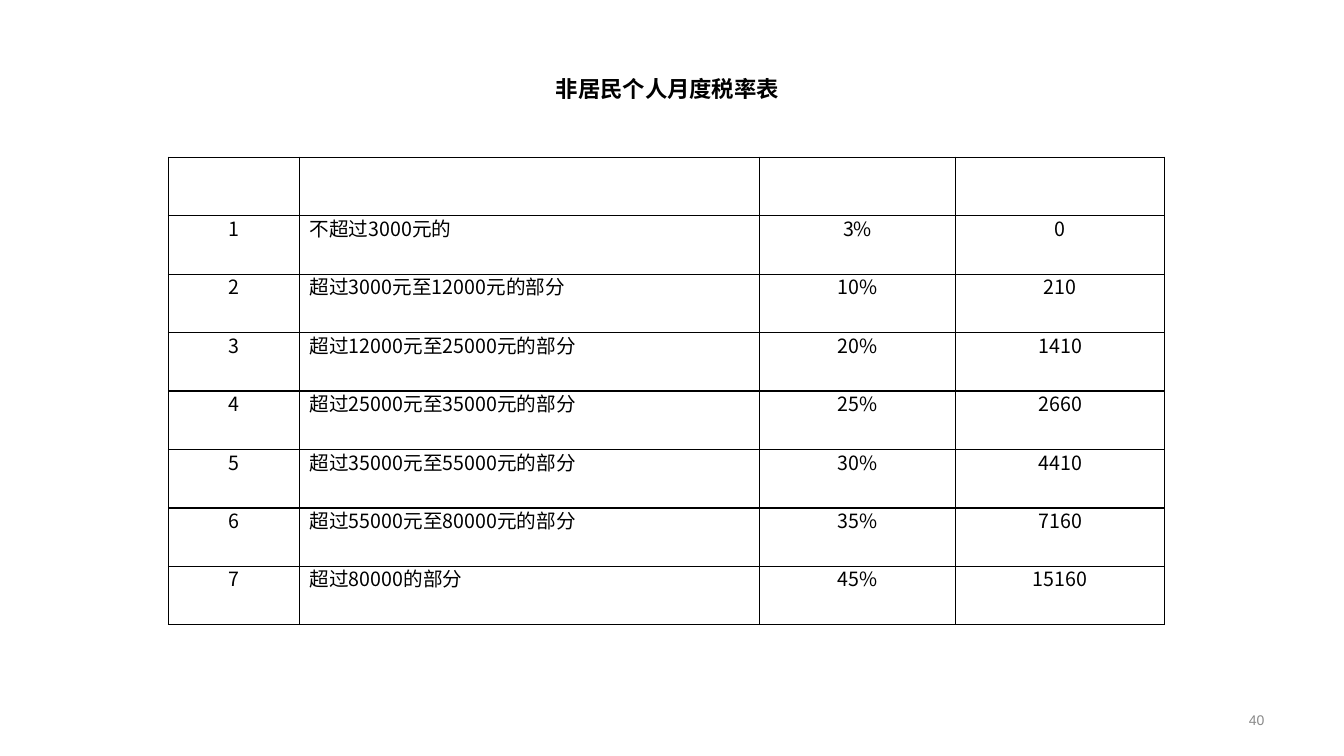
"""Build the slide with the monthly tax rate table for non-resident individuals."""
from dataclasses import astuple, dataclass

from lxml.etree import SubElement
from pptx import Presentation
from pptx.dml.color import RGBColor
from pptx.enum.shapes import MSO_SHAPE
from pptx.enum.text import MSO_ANCHOR as Anchor, MSO_AUTO_SIZE as AutoSize, PP_ALIGN as Align
from pptx.oxml.ns import qn
from pptx.slide import Slide
from pptx.table import _Cell as Cell
from pptx.text.text import TextFrame
from pptx.util import Inches, Pt

BLACK = RGBColor(0x00, 0x00, 0x00)
WHITE = RGBColor(0xFF, 0xFF, 0xFF)
GRAY = RGBColor(0x89, 0x89, 0x89)
CJK_FONT = "Noto Sans CJK SC"
COLUMN_WIDTHS = (1.3, 4.56, 1.95, 2.07)
ROW_HEIGHT = 0.58


@dataclass(frozen=True)
class TaxRow:
    level: str
    income: str
    rate: str
    deduction: str


@dataclass(frozen=True)
class TextStyle:
    size: int
    color: RGBColor
    bold: bool = False
    font: str = CJK_FONT
    align: Align = Align.CENTER


BRACKETS = (
    TaxRow("1", "不超过3000元的", "3%", "0"),
    TaxRow("2", "超过3000元至12000元的部分", "10%", "210"),
    TaxRow("3", "超过12000元至25000元的部分", "20%", "1410"),
    TaxRow("4", "超过25000元至35000元的部分", "25%", "2660"),
    TaxRow("5", "超过35000元至55000元的部分", "30%", "4410"),
    TaxRow("6", "超过55000元至80000元的部分", "35%", "7160"),
    TaxRow("7", "超过80000的部分", "45%", "15160"),
)
VALUE_STYLE = TextStyle(14, BLACK)
INCOME_STYLE = TextStyle(14, BLACK, align=Align.LEFT)
COLUMN_STYLES = (VALUE_STYLE, INCOME_STYLE, VALUE_STYLE, VALUE_STYLE)
TITLE_STYLE = TextStyle(16, BLACK, bold=True)
NUMBER_STYLE = TextStyle(10, GRAY, font="Arial", align=Align.RIGHT)


def write_text(frame: TextFrame, text: str, style: TextStyle) -> None:
    """Write one styled run into the first paragraph of a frame."""
    paragraph = frame.paragraphs[0]
    paragraph.alignment = style.align
    paragraph.line_spacing = 0.9
    run = paragraph.add_run()
    run.text = text
    run.font.size = Pt(style.size)
    run.font.bold = style.bold
    run.font.color.rgb = style.color
    run.font.name = style.font
    SubElement(run.font._element, qn("a:ea"), typeface=style.font)


def set_frame(frame: TextFrame, wrap: bool) -> None:
    """Set the margins, anchor and wrapping of a text frame."""
    frame.margin_left = frame.margin_right = Inches(0.13)
    frame.margin_top = frame.margin_bottom = Inches(0.07)
    frame.vertical_anchor = Anchor.MIDDLE
    frame.word_wrap = wrap


def format_cell(cell: Cell) -> None:
    """Give a cell its margins, thin black borders and white fill."""
    cell.margin_left = cell.margin_right = Inches(0.1)
    cell.margin_top = cell.margin_bottom = Inches(0)
    properties = cell._tc.get_or_add_tcPr()
    for side in ("lnL", "lnR", "lnT", "lnB"):
        line = SubElement(properties, qn(f"a:{side}"), w=str(Pt(1)))
        fill = SubElement(line, qn("a:solidFill"))
        SubElement(fill, qn("a:srgbClr"), val=str(BLACK))
    cell.fill.solid()
    cell.fill.fore_color.rgb = WHITE


def add_tax_table(slide: Slide) -> None:
    """Add the tax brackets below an empty first row."""
    row_count = len(BRACKETS) + 1
    table = slide.shapes.add_table(
        row_count, len(COLUMN_WIDTHS), Inches(1.67), Inches(1.56),
        Inches(sum(COLUMN_WIDTHS)), Inches(ROW_HEIGHT * row_count),
    ).table
    for column, width in zip(table.columns, COLUMN_WIDTHS):
        column.width = Inches(width)
    for row in table.rows:
        row.height = Inches(ROW_HEIGHT)
    for cell in table.iter_cells():
        format_cell(cell)
    for row_index, bracket in enumerate(BRACKETS, start=1):
        for column_index, (text, style) in enumerate(zip(astuple(bracket), COLUMN_STYLES)):
            write_text(table.cell(row_index, column_index).text_frame, text, style)


def add_title(slide: Slide) -> None:
    """Add the centred title above the table."""
    title = slide.shapes.add_shape(
        MSO_SHAPE.RECTANGLE, Inches(4.81), Inches(0.63), Inches(3.62), Inches(0.53))
    title.shadow.inherit = False
    title.fill.solid()
    title.fill.fore_color.rgb = WHITE
    title.line.fill.background()
    set_frame(title.text_frame, wrap=False)
    title.text_frame.auto_size = AutoSize.SHAPE_TO_FIT_TEXT
    write_text(title.text_frame, "非居民个人月度税率表", TITLE_STYLE)


def add_page_number(slide: Slide) -> None:
    """Add the page number at the bottom right."""
    number = slide.shapes.add_textbox(Inches(9.56), Inches(6.95), Inches(3.11), Inches(0.4))
    set_frame(number.text_frame, wrap=True)
    write_text(number.text_frame, "40", NUMBER_STYLE)


def main() -> None:
    """Build and save the presentation."""
    presentation = Presentation()
    presentation.slide_width = Inches(13.33)
    presentation.slide_height = Inches(7.5)
    slide = presentation.slides.add_slide(presentation.slide_layouts[6])
    add_tax_table(slide)
    add_title(slide)
    add_page_number(slide)
    presentation.save("out.pptx")


if __name__ == "__main__":
    main()
